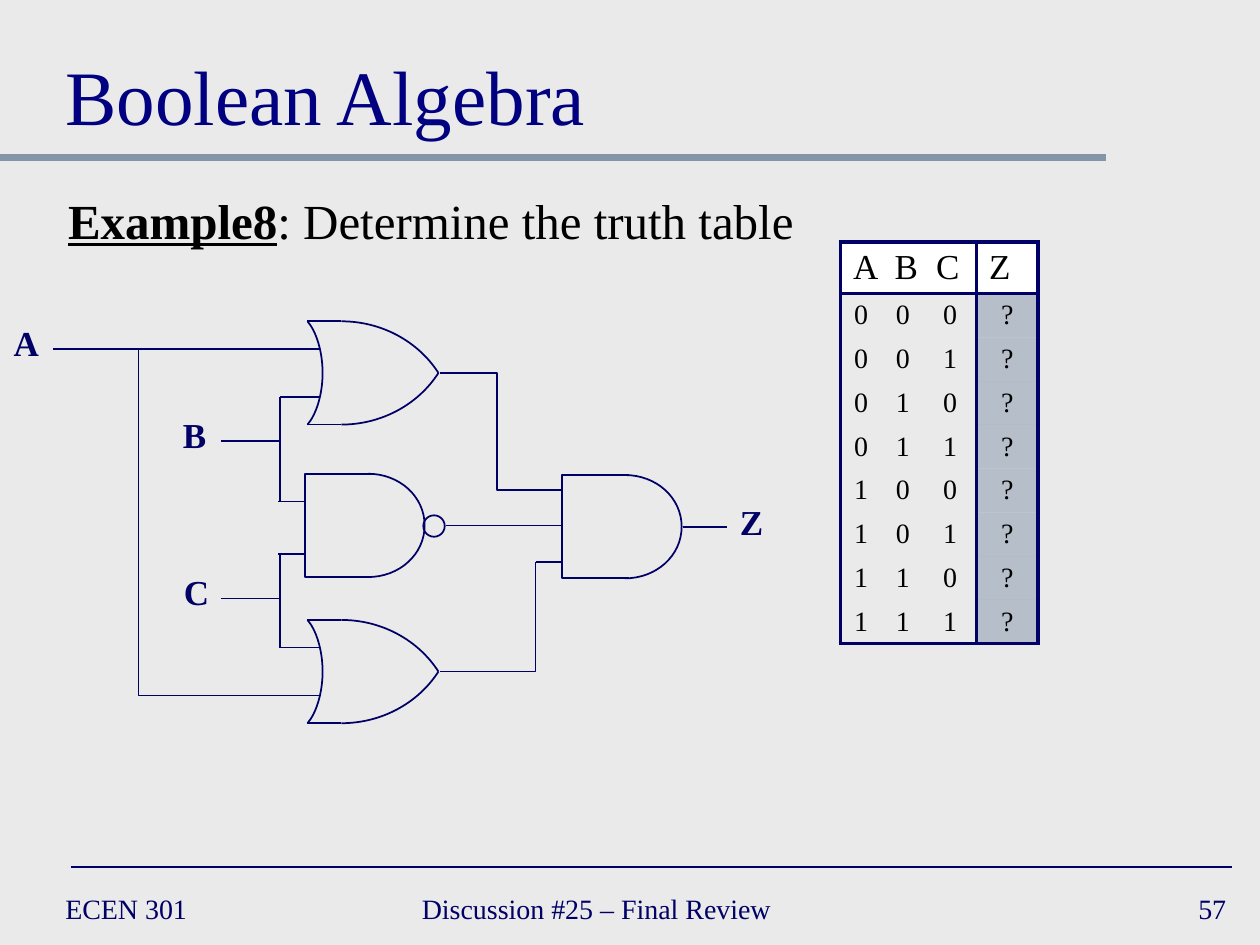
from dataclasses import dataclass

from lxml import etree
from pptx import Presentation
from pptx.dml.color import RGBColor
from pptx.enum.shapes import MSO_CONNECTOR, MSO_SHAPE
from pptx.enum.text import MSO_ANCHOR, MSO_AUTO_SIZE, PP_ALIGN
from pptx.oxml.ns import qn
from pptx.util import Inches, Pt

LEFT, CENTER, RIGHT = PP_ALIGN.LEFT, PP_ALIGN.CENTER, PP_ALIGN.RIGHT
MIDDLE, BOTTOM = MSO_ANCHOR.MIDDLE, MSO_ANCHOR.BOTTOM
STRAIGHT, ELBOW = MSO_CONNECTOR.STRAIGHT, MSO_CONNECTOR.ELBOW
FIXED, OVAL = MSO_AUTO_SIZE.NONE, MSO_SHAPE.OVAL

NAVY = RGBColor(0x00, 0x00, 0x66)
BLUE = RGBColor(0x00, 0x00, 0x80)
SLATE = RGBColor(0x84, 0x95, 0xA9)
PALE = RGBColor(0xEA, 0xEA, 0xEA)
WHITE = RGBColor(0xFF, 0xFF, 0xFF)
BLACK = RGBColor(0x00, 0x00, 0x00)
FONT = "Times New Roman"
HIGH = 0.82
MID = HIGH / 2

Point = tuple[float, float]


@dataclass
class Gate:
    x: float
    y: float
    pins: tuple[float, ...]
    out: float
    tail: float


@dataclass
class Wire:
    start: Point
    end: Point
    color: RGBColor = NAVY
    width: float = 1


@dataclass
class Label:
    text: str
    x: float
    y: float
    w: float
    h: float = 0.43
    size: float = 20
    bold: bool = True
    align: PP_ALIGN = CENTER
    wrap: bool = False


def add_run(para, text: str, size: float, color: RGBColor, bold: bool = False):
    run = para.add_run()
    run.text = text
    run.font.name = FONT
    run.font.size = Pt(size)
    run.font.bold = bold
    run.font.color.rgb = color
    return run


def place(shape, x: float, y: float, w: float, h: float) -> None:
    shape.left, shape.top = Inches(x), Inches(y)
    shape.width, shape.height = Inches(w), Inches(h)


def draw_wire(shapes, wire: Wire, kind=STRAIGHT):
    ends = [Inches(v) for v in wire.start + wire.end]
    line = shapes.add_connector(kind, *ends)
    line.line.color.rgb = wire.color
    line.line.width = Pt(wire.width)
    etree.SubElement(line._element.spPr, qn("a:effectLst"))
    return line


def draw_corner(shapes, wire: Wire) -> None:
    line = draw_wire(shapes, wire, ELBOW)
    geom = line._element.spPr.find(qn("a:prstGeom"))
    guides = geom.find(qn("a:avLst"))
    if guides is None:
        guides = etree.SubElement(geom, qn("a:avLst"))
    etree.SubElement(guides, qn("a:gd"), name="adj1", fmla="val 100000")


def outline(shape) -> None:
    shape.shadow.inherit = False
    shape.fill.background()
    shape.line.color.rgb = NAVY
    shape.line.width = Pt(1)


def draw_path(shapes, points: list[Point]):
    dots = [(Inches(x), Inches(y)) for x, y in points]
    pen = shapes.build_freeform(*dots[0])
    pen.add_line_segments(dots[1:], close=False)
    shape = pen.convert_to_shape()
    outline(shape)
    return shape


def draw_curve(shapes, points: list[Point]) -> None:
    shape = draw_path(shapes, points)
    steps = list(shape._element.iter(qn("a:lnTo")))
    for i in range(0, len(steps), 3):
        bend = etree.Element(qn("a:cubicBezTo"))
        steps[i].addprevious(bend)
        for step in steps[i:i + 3]:
            bend.append(step[0])
            step.getparent().remove(step)


def flip(points: list[Point], axis: float) -> list[Point]:
    return [(x, 2 * axis - y) for x, y in reversed(points)]


def draw_pins(shapes, gate: Gate, edge: float, back: float) -> None:
    for pin in gate.pins:
        y = gate.y + pin
        draw_wire(shapes, Wire((gate.x + edge, y), (gate.x - back, y)))
    y = gate.y + MID
    draw_wire(shapes, Wire((gate.x + gate.out, y), (gate.x + gate.tail, y)))


def draw_and(shapes, gate: Gate) -> None:
    x, y = gate.x, gate.y
    mid, low = y + MID, y + HIGH
    top = [(x + 0.5, y), (x + 0.75, y), (x + 0.95, y + 0.18), (x + 0.95, mid)]
    draw_curve(shapes, top + flip(top, mid)[1:])
    draw_path(shapes, [(x + 0.53, y), (x, y), (x, low), (x + 0.53, low)])
    draw_pins(shapes, gate, 0, 0.21)


def draw_or(shapes, gate: Gate) -> None:
    x, y = gate.x, gate.y
    mid = y + MID
    top = [(x + 0.27, y), (x + 0.59, y), (x + 0.88, y + 0.16), (x + 1.04, mid)]
    back = [(x, y), (x + 0.07, y + 0.08), (x + 0.12, y + 0.24), (x + 0.12, mid)]
    for points in (top, flip(top, mid), back + flip(back, mid)[1:]):
        draw_curve(shapes, points)
    for edge in (y, y + HIGH):
        draw_wire(shapes, Wire((x + 0.27, edge), (x, edge)))
    draw_pins(shapes, gate, 0.09, 0.22)


def draw_label(shapes, label: Label) -> None:
    box = shapes.add_textbox(0, 0, 0, 0)
    place(box, label.x, label.y, label.w, label.h)
    frame = box.text_frame
    frame.word_wrap = label.wrap
    frame.vertical_anchor = MIDDLE
    para = frame.paragraphs[0]
    para.alignment = label.align
    add_run(para, label.text, label.size, NAVY, label.bold)


def draw_edge(cell, side: str, shown: bool) -> None:
    line = etree.SubElement(cell._tc.get_or_add_tcPr(), qn(f"a:ln{side}"), w=str(Pt(2.25)))
    if shown:
        fill = etree.SubElement(line, qn("a:solidFill"))
        etree.SubElement(fill, qn("a:srgbClr"), val=str(NAVY))
    else:
        etree.SubElement(line, qn("a:noFill"))


def draw_table(shapes) -> None:
    rows = ["ABCZ"] + [f"{n:03b}?" for n in range(8)]
    widths = (0.33, 0.33, 0.42, 0.49)
    last = len(rows) - 1
    frame = shapes.add_table(len(rows), len(widths), Inches(6.67), Inches(1.92),
                             Inches(sum(widths)), Inches(3.19))
    table = frame.table
    table.first_row = table.horz_banding = False
    for col, width in zip(table.columns, widths):
        col.width = Inches(width)
    for r, row in enumerate(rows):
        table.rows[r].height = Inches(2.78 / 8 if r else 0.41)
        for c, text in enumerate(row):
            cell = table.cell(r, c)
            cell.margin_top = cell.margin_bottom = Inches(0.04)
            cell.vertical_anchor = MIDDLE
            para = cell.text_frame.paragraphs[0]
            para.alignment = CENTER if r else LEFT
            add_run(para, text, 16 if r else 20, BLACK)
            draw_edge(cell, "L", c in (0, 3))
            draw_edge(cell, "R", c in (2, 3))
            draw_edge(cell, "T", r in (0, 1))
            draw_edge(cell, "B", r in (0, last))
            if r and c < 3:
                cell.fill.background()
                continue
            cell.fill.solid()
            cell.fill.fore_color.rgb = SLATE if r else WHITE
            if r:
                tint = cell._tc.tcPr.find(qn("a:solidFill"))[0]
                etree.SubElement(tint, qn("a:alpha"), val="50000")


def fill_text(slide) -> None:
    title, body = slide.shapes.title, slide.placeholders[1]
    place(title, 0.42, 0.17, 9.17, 1)
    place(body, 0.44, 1.46, 9.14, 0.93)
    for box in (title, body):
        box.text_frame.auto_size = FIXED
    title.text_frame.vertical_anchor = BOTTOM
    head = title.text_frame.paragraphs[0]
    head.alignment = LEFT
    add_run(head, "Boolean Algebra", 44, BLUE)
    para = body.text_frame.paragraphs[0]
    props = para._p.get_or_add_pPr()
    props.set("marL", str(Inches(0.38)))
    props.set("indent", str(-Inches(0.38)))
    etree.SubElement(props, qn("a:buNone"))
    para.space_before = Pt(0)
    add_run(para, "Example8", 28, BLACK, True).font.underline = True
    add_run(para, ": Determine the truth table", 28, BLACK)


def main() -> None:
    deck = Presentation()
    deck.slide_width, deck.slide_height = Inches(10), Inches(7.5)
    slide = deck.slides.add_slide(deck.slide_layouts[1])
    slide.background.fill.solid()
    slide.background.fill.fore_color.rgb = PALE
    shapes = slide.shapes
    draw_wire(shapes, Wire((0, 1.25), (8.78, 1.25), SLATE, 4))
    draw_wire(shapes, Wire((0.56, 6.88), (9.78, 6.88)))
    fill_text(slide)
    draw_table(shapes)

    draw_and(shapes, Gate(4.46, 3.77, (0.12, 0.4, 0.69), 1.31, 0.96))
    draw_and(shapes, Gate(2.42, 3.76, (0.22, 0.64), 1.47, 1.12))
    for y in (2.55, 4.92):
        draw_or(shapes, Gate(2.44, y, (0.22, 0.6), 1.2, 1.05))
    ring = shapes.add_shape(OVAL, 0, 0, 0, 0)
    place(ring, 3.36, 4.09, 0.17, 0.17)
    outline(ring)

    for wire in (
        Wire((3.89, 4.17), (4.25, 4.17)),
        Wire((2.22, 2.77), (0.42, 2.77)),
        Wire((2.22, 3.98), (2.22, 3.15)),
        Wire((2.22, 5.14), (2.22, 4.4)),
        Wire((2.22, 3.5), (1.75, 3.5)),
        Wire((2.22, 4.75), (1.75, 4.75)),
    ):
        draw_wire(shapes, wire)
    draw_wire(shapes, Wire((3.64, 2.96), (4.25, 3.89)), ELBOW)
    draw_corner(shapes, Wire((3.64, 5.33), (4.25, 4.46)))
    draw_corner(shapes, Wire((2.22, 5.52), (1.1, 2.77)))

    for label in (
        Label("A", 0.01, 2.5, 0.4),
        Label("B", 1.35, 3.23, 0.39),
        Label("C", 1.36, 4.48, 0.4),
        Label("Z", 5.77, 3.92, 0.39),
        Label("ECEN 301", 0.42, 7, 2.17, 0.42, 16, False, LEFT, True),
        Label("Discussion #25 – Final Review", 3.25, 7, 3.83, 0.42, 16, False, LEFT, True),
        Label("57", 7.75, 7, 2.08, 0.42, 16, False, RIGHT, True),
    ):
        draw_label(shapes, label)
    deck.save("out.pptx")


if __name__ == "__main__":
    main()
